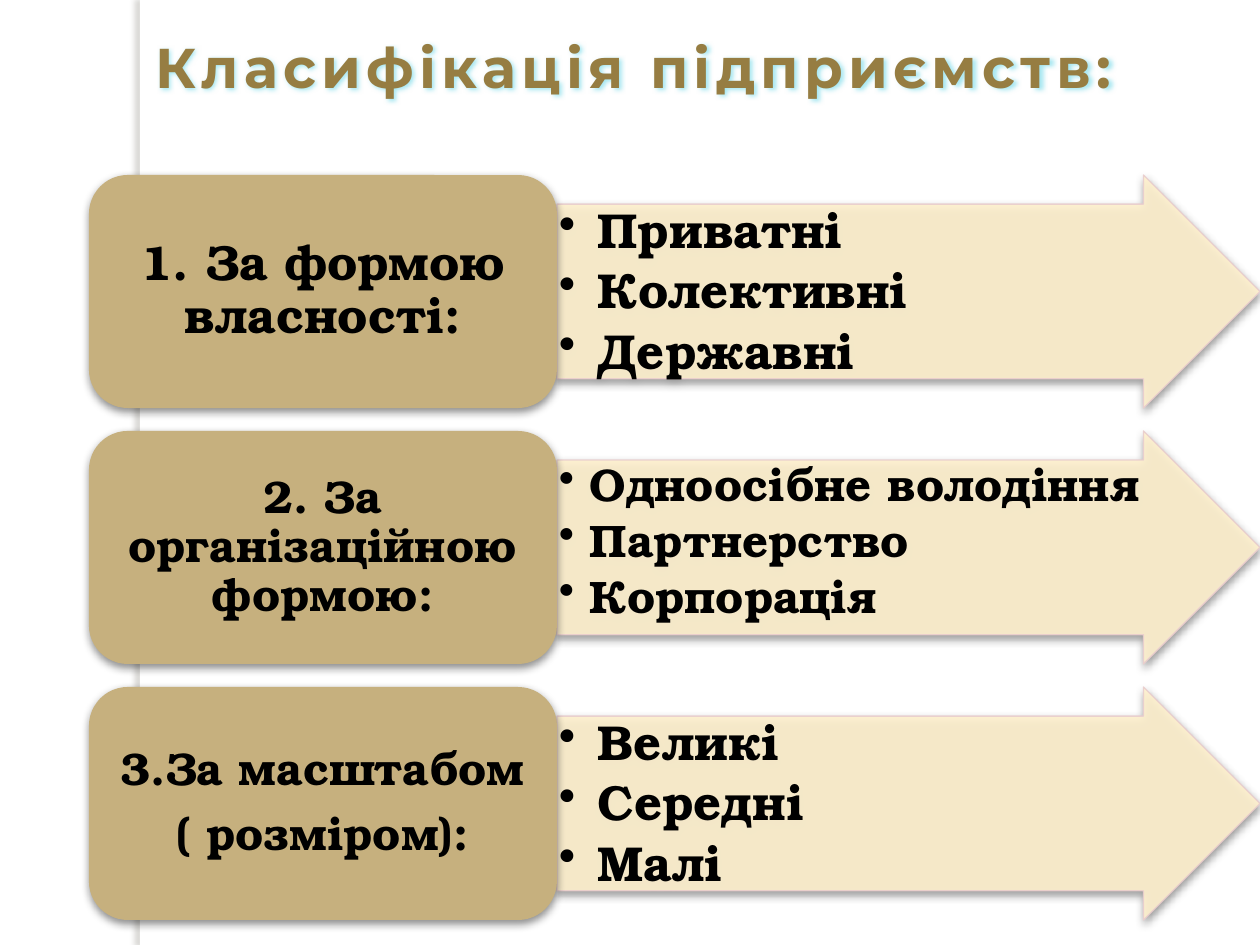
from lxml import etree
from pptx import Presentation
from pptx.dml.color import RGBColor
from pptx.enum.shapes import MSO_SHAPE
from pptx.enum.text import MSO_ANCHOR, MSO_AUTO_SIZE, PP_ALIGN
from pptx.oxml.ns import qn
from pptx.util import Emu, Pt

RECTANGLE = MSO_SHAPE.RECTANGLE
ROUNDED = MSO_SHAPE.ROUNDED_RECTANGLE
ARROW = MSO_SHAPE.RIGHT_ARROW
TOP, MIDDLE = MSO_ANCHOR.TOP, MSO_ANCHOR.MIDDLE
LEFT, CENTER = PP_ALIGN.LEFT, PP_ALIGN.CENTER
GROW = MSO_AUTO_SIZE.SHAPE_TO_FIT_TEXT

WHITE = RGBColor(0xFF, 0xFF, 0xFF)
BLACK = RGBColor(0, 0, 0)
GOLD = RGBColor(0x96, 0x7D, 0x42)
SAND = RGBColor(0xC6, 0xB0, 0x7E)
CREAM = RGBColor(0xFF, 0xF1, 0xCE)
ROSE = RGBColor(0xE9, 0xCD, 0xCD)
TAUPE = RGBColor(0x73, 0x6F, 0x63)
CYAN = RGBColor(0x6F, 0xD8, 0xE8)

TITLE_FONT = "Montserrat"
BODY_FONT = "TeX Gyre Bonum"
PX_PER_INCH = 126

CLASSES = [
    (["1. За формою власності:"], 28,
     ["Приватні", "Колективні", "Державні"], 28, 39),
    (["2. За організаційною формою:"], 26,
     ["Одноосібне володіння", "Партнерство", "Корпорація"], 26, 31),
    (["3.За масштабом", "( розміром):"], 26,
     ["Великі", "Середні", "Малі"], 28, 39),
]


def px(length):
    return Emu(round(length * 914400 / PX_PER_INCH))


def set_alpha(painted, percent):
    color = painted.find(qn("a:solidFill")).find(qn("a:srgbClr"))
    etree.SubElement(color, qn("a:alpha"), val=str(percent * 1000))


def add_shadow(shape, color, alpha, blur, distance, angle):
    shape.shadow.inherit = False
    effects = shape.element.spPr.find(qn("a:effectLst"))
    shadow = etree.SubElement(
        effects, qn("a:outerShdw"), blurRad=str(int(Pt(blur))),
        dist=str(int(Pt(distance))), dir=str(angle * 60000), rotWithShape="0")
    tint = etree.SubElement(shadow, qn("a:srgbClr"), val=str(color))
    etree.SubElement(tint, qn("a:alpha"), val=str(alpha * 1000))


def add_panel(slide, kind, box, fill):
    panel = slide.shapes.add_shape(kind, *map(px, box))
    panel.fill.solid()
    panel.fill.fore_color.rgb = fill
    panel.line.fill.background()
    return panel


def write_text(shape, lines, *, font, size, color, align=LEFT, anchor=TOP,
               inset=(14, 7), wrap=True, leading=1.0, after=0.0,
               bullet_indent=0, spacing=0):
    frame = shape.text_frame
    frame.word_wrap = wrap
    frame.vertical_anchor = anchor
    frame.margin_left = frame.margin_right = px(inset[0])
    frame.margin_top = frame.margin_bottom = px(inset[1])
    for index, line in enumerate(lines):
        paragraph = frame.paragraphs[0] if index == 0 else frame.add_paragraph()
        paragraph.alignment = align
        paragraph.line_spacing = leading
        paragraph.space_after = Pt(round(size * after, 1))
        if bullet_indent:
            paragraph.level = 1
            properties = paragraph._p.get_or_add_pPr()
            properties.set("marL", str(int(px(bullet_indent))))
            properties.set("indent", str(-int(px(bullet_indent))))
            etree.SubElement(properties, qn("a:buChar"), char="•")
        run = paragraph.add_run()
        run.text = line
        run.font.name = font
        run.font.size = Pt(size)
        run.font.bold = True
        run.font.color.rgb = color
        if spacing:
            run._r.get_or_add_rPr().set("spc", str(spacing * 100))


def add_side_band(slide, box):
    band = add_panel(slide, RECTANGLE, box, WHITE)
    add_shadow(band, TAUPE, 25, 3, 3, 180)


def add_title(slide, box):
    title = slide.shapes.add_textbox(*map(px, box))
    write_text(title, ["Класифікація підприємств: "], font=TITLE_FONT, size=32,
               color=GOLD, align=CENTER, inset=(13, 6), wrap=False, spacing=3)
    title.text_frame.auto_size = GROW
    add_shadow(title, CYAN, 60, 2, 1, 45)


def add_class_row(slide, box, criterion, criterion_size, kinds, kinds_size, indent):
    left, top, width, height = box
    criterion_width = round(width * 0.4)

    kinds_arrow = add_panel(
        slide, ARROW,
        (left + criterion_width, top, width - criterion_width, height), CREAM)
    kinds_arrow.adjustments[0] = 0.75
    kinds_arrow.adjustments[1] = 0.5
    kinds_arrow.line.color.rgb = ROSE
    kinds_arrow.line.width = Pt(0.75)
    properties = kinds_arrow.element.spPr
    for painted in (properties, properties.find(qn("a:ln"))):
        set_alpha(painted, 90)
    add_shadow(kinds_arrow, BLACK, 43, 5, 2, 90)
    write_text(kinds_arrow, kinds, font=BODY_FONT, size=kinds_size, color=BLACK,
               inset=(2, 2), leading=0.9, after=0.15, bullet_indent=indent)

    criterion_card = add_panel(
        slide, ROUNDED, (left, top, criterion_width, height), SAND)
    add_shadow(criterion_card, BLACK, 43, 5, 2, 90)
    write_text(criterion_card, criterion, font=BODY_FONT, size=criterion_size,
               color=BLACK, align=CENTER, anchor=MIDDLE, leading=0.9, after=0.35)


def add_classification(slide, box):
    left, top, width, height = box
    gap = 23
    row_height = (height - gap * (len(CLASSES) - 1)) // len(CLASSES)
    for index, row in enumerate(CLASSES):
        row_top = top + index * (row_height + gap)
        add_class_row(slide, (left, row_top, width, row_height), *row)


def main():
    presentation = Presentation()
    presentation.slide_width = px(1260)
    presentation.slide_height = px(945)
    slide = presentation.slides.add_slide(presentation.slide_layouts[6])
    add_side_band(slide, (140, 0, 10, 945))
    add_title(slide, (116, 26, 1057, 81))
    add_classification(slide, (89, 175, 1171, 745))
    presentation.save("out.pptx")


if __name__ == "__main__":
    main()
